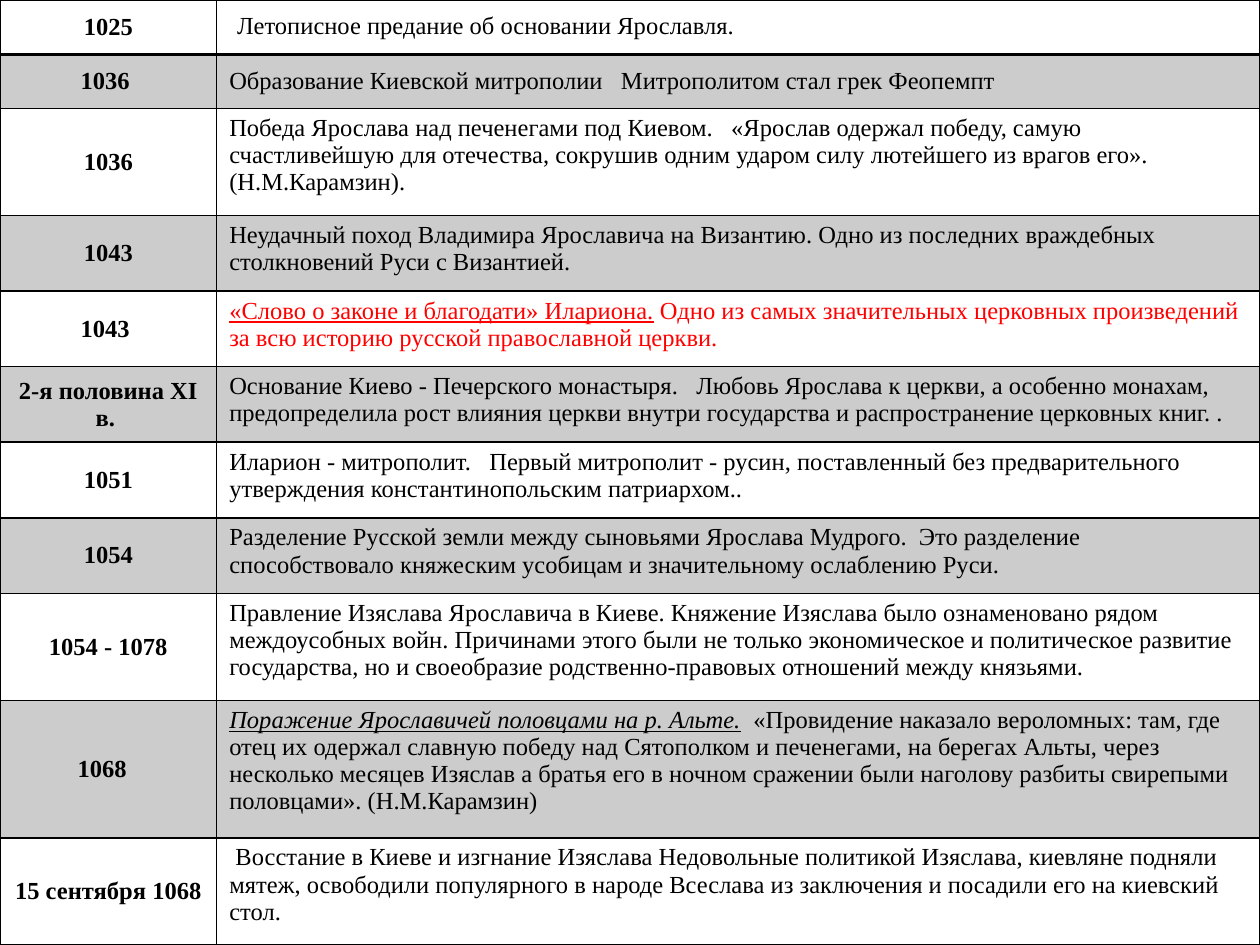
from lxml.etree import SubElement
from pptx import Presentation
from pptx.dml.color import RGBColor
from pptx.enum.text import MSO_ANCHOR as Anchor, PP_ALIGN as Align
from pptx.oxml.ns import qn
from pptx.util import Inches, Pt

COLORS = {"ink": "000000", "accent": "FF0000"}
FONT = "Times New Roman"
BAND_OPACITY = 20
COLUMN_WIDTHS = [1.72, 8.28]
PLAIN = {}
RED = {"color": "accent"}
RED_LINK = {"color": "accent", "underline": True}
STRESSED = {"italic": True, "underline": True}

EVENTS = [
    ("1025", 0.43, [(" ", {"size": 18}), ("Летописное предание об основании Ярославля.", PLAIN)]),
    ("1036 ", 0.43, [("Образование Киевской митрополии   Митрополитом стал грек Феопемпт", PLAIN)]),
    ("1036", 0.85, [("Победа Ярослава над печенегами под Киевом.   «Ярослав одержал победу, самую "
                     "счастливейшую для отечества, сокрушив одним ударом силу лютейшего из врагов его». "
                     "(Н.М.Карамзин).", PLAIN)]),
    ("1043", 0.6, [("Неудачный поход Владимира Ярославича на Византию. Одно из последних враждебных "
                    "столкновений Руси с Византией.", PLAIN)]),
    ("1043 ", 0.6, [("«Слово о законе и благодати» Илариона.", RED_LINK),
                    (" Одно из самых значительных церковных произведений за всю историю русской "
                     "православной церкви.", RED)]),
    ("2-я половина XI в. ", 0.6, [("Основание Киево - Печерского монастыря.   Любовь Ярослава к церкви, "
                                   "а особенно монахам, предопределила рост влияния церкви внутри "
                                   "государства и распространение церковных книг. .", PLAIN)]),
    ("1051", 0.6, [("Иларион - митрополит.   Первый митрополит - русин, поставленный без "
                    "предварительного утверждения константинопольским патриархом..", PLAIN)]),
    ("1054", 0.6, [("Разделение Русской земли между сыновьями Ярослава Мудрого.  Это разделение "
                    "способствовало княжеским усобицам и значительному ослаблению Руси.", PLAIN)]),
    ("1054 - 1078", 0.85, [("Правление Изяслава Ярославича в Киеве. Княжение Изяслава было ознаменовано "
                            "рядом междоусобных войн. Причинами этого были не только экономическое и "
                            "политическое развитие государства, но и своеобразие родственно-правовых "
                            "отношений между князьями.", PLAIN)]),
    ("1068  ", 1.09, [("Поражение Ярославичей половцами на р. Альте.", STRESSED),
                      ("  «Провидение наказало вероломных: там, где отец их одержал славную победу над "
                       "Сятополком и печенегами, на берегах Альты, через несколько месяцев Изяслав а "
                       "братья его в ночном сражении были наголову разбиты свирепыми половцами». "
                       "(Н.М.Карамзин)", PLAIN)]),
    ("15 сентября 1068 ", 0.85, [(" Восстание в Киеве и изгнание Изяслава Недовольные политикой Изяслава, "
                                  "киевляне подняли мятеж, освободили популярного в народе Всеслава из "
                                  "заключения и посадили его на киевский стол.", PLAIN)]),
]


def add_span(para, text, size=14, color="ink", bold=False, italic=False, underline=False):
    span = para.add_run()
    span.text = text
    font = span.font
    font.name, font.size = FONT, Pt(size)
    font.bold, font.italic, font.underline = bold, italic, underline
    font.color.rgb = RGBColor.from_string(COLORS[color])


def set_borders(cell, widths):
    properties = cell._tc.get_or_add_tcPr()
    for side, width in widths.items():
        line = SubElement(properties, qn(f"a:ln{side}"), w=str(Pt(width)))
        SubElement(SubElement(line, qn("a:solidFill")), qn("a:srgbClr"), val=COLORS["ink"])


def set_band(cell, shaded):
    if not shaded:
        cell.fill.background()
        return
    cell.fill.solid()
    cell.fill.fore_color.rgb = RGBColor.from_string(COLORS["ink"])
    color = cell._tc.tcPr.find(f"{qn('a:solidFill')}/{qn('a:srgbClr')}")
    SubElement(color, qn("a:alpha"), val=str(BAND_OPACITY * 1000))


def main():
    """Build the chronology table slide."""
    deck = Presentation()
    deck.slide_width, deck.slide_height = Inches(10), Inches(7.5)
    page = deck.slides.add_slide(deck.slide_layouts[6])
    table = page.shapes.add_table(len(EVENTS), len(COLUMN_WIDTHS), 0, 0,
                                  deck.slide_width, deck.slide_height).table
    table.first_row = table.horz_banding = False
    for column, width in zip(table.columns, COLUMN_WIDTHS):
        column.width = Inches(width)

    for index, (date, height, story) in enumerate(EVENTS):
        table.rows[index].height = Inches(height)
        date_cell, story_cell = table.rows[index].cells
        borders = {"L": 1, "R": 1, "T": 2 if index == 1 else 1, "B": 2 if index == 0 else 1}
        for cell in (date_cell, story_cell):
            set_borders(cell, borders)
            set_band(cell, index % 2 == 1)
        date_cell.vertical_anchor = Anchor.MIDDLE
        story_cell.vertical_anchor = Anchor.MIDDLE if index == 1 else Anchor.TOP
        date_para = date_cell.text_frame.paragraphs[0]
        date_para.alignment = Align.CENTER
        add_span(date_para, date, bold=True)
        for text, style in story:
            add_span(story_cell.text_frame.paragraphs[0], text, **style)

    deck.save("out.pptx")


if __name__ == "__main__":
    main()
